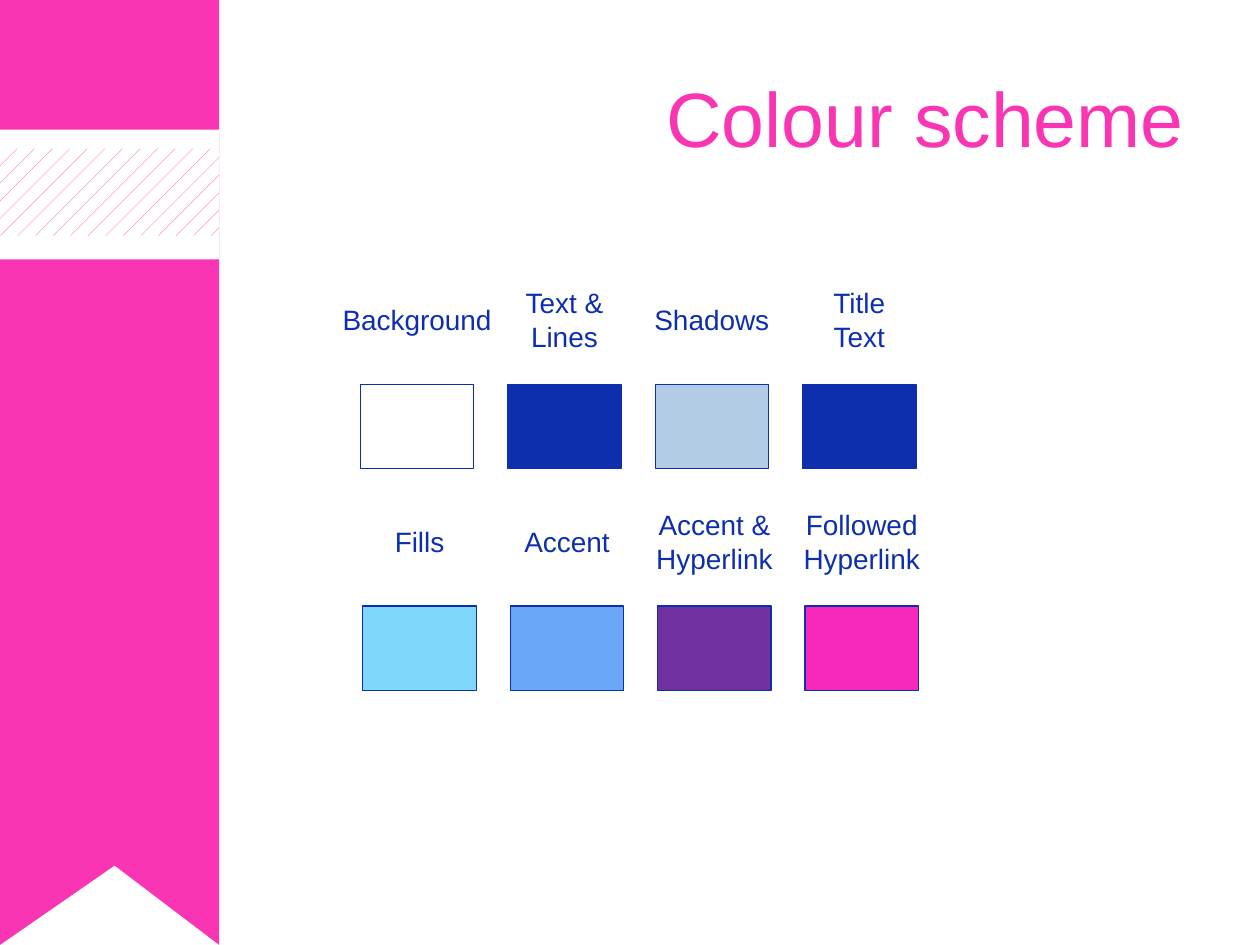
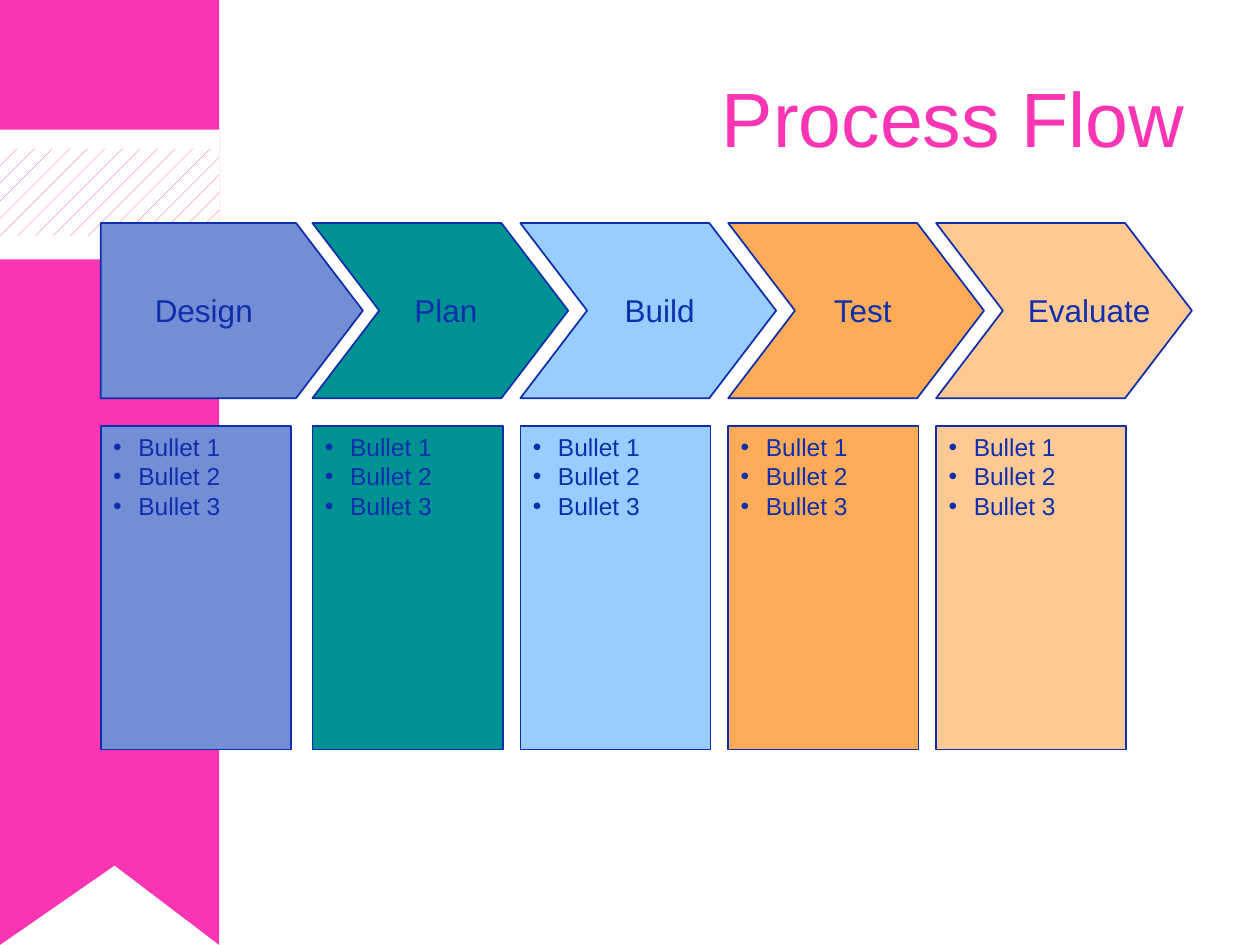
from lxml.etree import SubElement
from pptx import Presentation
from pptx.dml.color import RGBColor
from pptx.enum.dml import MSO_PATTERN as Pattern
from pptx.enum.shapes import MSO_SHAPE as Preset
from pptx.enum.text import MSO_ANCHOR as Anchor, MSO_AUTO_SIZE as AutoSize, PP_ALIGN as Align
from pptx.oxml.ns import qn
from pptx.util import Inches, Pt

FONT = "Arial"
COLOURS = {
    "white": "FFFFFF",
    "pink": "F935B3",
    "navy": "0E2FAD",
    "shadow": "B3CCE6",
    "sky": "7FD7FC",
    "blue": "6BA7F8",
    "purple": "7030A0",
    "magenta": "F729BC",
    "periwinkle": "748ED6",
    "teal": "009193",
    "pale_blue": "99CCFF",
    "orange": "FFAB57",
    "peach": "FFC993",
}
RIBBON_WIDTH = 1.74
SWATCH_WIDTH, SWATCH_HEIGHT, SWATCH_PITCH = 0.9, 0.67, 1.17
LABEL_HEIGHTS = {1: 0.37, 2: 0.64}

SWATCH_ROWS = [
    (2.86, 3.05, 2.54, [
        ("Background", 1.42, "white"),
        ("Text &\nLines", 0.87, "navy"),
        ("Shadows", 1.14, "shadow"),
        ("Title\vText", 0.66, "navy"),
    ]),
    (2.88, 4.81, 4.3, [
        ("Fills", 0.62, "sky"),
        ("Accent", 0.91, "blue"),
        ("Accent &\nHyperlink", 1.16, "purple"),
        ("Followed\nHyperlink", 1.16, "magenta"),
    ]),
]

STEPS = [
    ("Design", 1.13, 0.98, "periwinkle"),
    ("Plan", 3.19, 0.7, "teal"),
    ("Build", 4.86, 0.76, "pale_blue"),
    ("Test", 6.52, 0.69, "orange"),
    ("Evaluate", 8.06, 1.17, "peach"),
]
BULLETS = ["Bullet 1", "Bullet 2", "Bullet 3"]
FIRST_STEP_LEFT, SECOND_STEP_LEFT, STEP_PITCH = 0.8, 2.48, 1.65
ARROW_TOP, ARROW_HEIGHT, ARROW_POINT = 1.77, 1.39, 0.53


def colour(name):
    return RGBColor.from_string(COLOURS[name])


def style_text(frame, size, colour_name, align):
    for para in frame.paragraphs:
        para.alignment = align
        para.font.name = FONT
        para.font.size = Pt(size)
        para.font.color.rgb = colour(colour_name)


def style_shape(shape, fill, line_width=None):
    shape.shadow.inherit = False
    shape.fill.solid()
    shape.fill.fore_color.rgb = colour(fill)
    if line_width is None:
        shape.line.fill.background()
    else:
        shape.line.color.rgb = colour("navy")
        shape.line.width = Pt(line_width)


def add_preset(slide, preset, left, top, width, height, fill, line_width=None):
    shape = slide.shapes.add_shape(
        preset, Inches(left), Inches(top), Inches(width), Inches(height))
    style_shape(shape, fill, line_width)
    return shape


def add_label(slide, text, left, top, width, height, size, align):
    box = slide.shapes.add_textbox(
        Inches(left), Inches(top), Inches(width), Inches(height))
    frame = box.text_frame
    frame.word_wrap = False
    frame.auto_size = AutoSize.SHAPE_TO_FIT_TEXT
    frame.text = text
    style_text(frame, size, "navy", align)


def add_titled_slide(deck, layout, text):
    slide = deck.slides.add_slide(layout)
    title = slide.shapes.title
    title.left, title.top = Inches(0.5), Inches(0.3)
    title.width, title.height = Inches(9), Inches(1.25)
    frame = title.text_frame
    frame.text = text
    frame.vertical_anchor = Anchor.MIDDLE
    frame.auto_size = AutoSize.NONE
    style_text(frame, 44, "pink", Align.RIGHT)
    return slide


def add_ribbon(layout, slide):
    outline = [(RIBBON_WIDTH, 0), (RIBBON_WIDTH, 7.5), (0.91, 6.87), (0, 7.5)]
    builder = slide.shapes.build_freeform(0, 0)
    builder.add_line_segments([(Inches(x), Inches(y)) for x, y in outline])
    ribbon = builder.convert_to_shape()
    style_shape(ribbon, "pink")

    band = add_preset(slide, Preset.RECTANGLE, 0, 1.03, RIBBON_WIDTH, 1.03, "white")
    hatch = add_preset(slide, Preset.RECTANGLE, 0, 1.18, RIBBON_WIDTH, 0.69, "white")
    hatch.fill.patterned()
    hatch.fill.pattern = Pattern.PERCENT_5
    hatch.fill.fore_color.rgb = colour("pink")
    hatch.fill.back_color.rgb = colour("white")

    for position, shape in enumerate([ribbon, band, hatch], start=2):
        layout.shapes.element.insert(position, shape.element)


def add_swatch(slide, left, top, label_middle, text, label_width, fill):
    add_preset(slide, Preset.RECTANGLE, left, top,
               SWATCH_WIDTH, SWATCH_HEIGHT, fill, 0.75)
    height = LABEL_HEIGHTS[len(text.splitlines())]
    add_label(slide, text, left + (SWATCH_WIDTH - label_width) / 2,
              label_middle - height / 2, label_width, height, 16, Align.CENTER)


def add_bullet(para):
    properties = para._p.get_or_add_pPr()
    properties.set("marL", str(Inches(0.2)))
    properties.set("indent", str(Inches(-0.2)))
    SubElement(properties, qn("a:buFont")).set("typeface", FONT)
    SubElement(properties, qn("a:buChar")).set("char", "•")


def add_bullet_panel(slide, left, fill):
    panel = add_preset(slide, Preset.RECTANGLE, left, 3.38, 1.51, 2.57, fill, 1)
    frame = panel.text_frame
    frame.vertical_anchor = Anchor.TOP
    frame.text = "\n".join(BULLETS)
    for para in frame.paragraphs:
        add_bullet(para)
    style_text(frame, 14, "navy", Align.LEFT)


def add_step_arrow(slide, preset, left, width, fill):
    arrow = add_preset(slide, preset, left, ARROW_TOP, width, ARROW_HEIGHT, fill, 1)
    arrow.adjustments[0] = ARROW_POINT / ARROW_HEIGHT


def fill_colour_scheme(slide):
    for row_left, top, label_middle, swatches in SWATCH_ROWS:
        for column, (text, label_width, fill) in enumerate(swatches):
            left = row_left + column * SWATCH_PITCH
            add_swatch(slide, left, top, label_middle, text, label_width, fill)


def fill_process_flow(slide):
    for index, (name, label_left, label_width, fill) in enumerate(STEPS):
        if index == 0:
            left, preset, width = FIRST_STEP_LEFT, Preset.PENTAGON, 2.08
        else:
            left = SECOND_STEP_LEFT + (index - 1) * STEP_PITCH
            preset, width = Preset.CHEVRON, 2.03
        add_bullet_panel(slide, left, fill)
        add_step_arrow(slide, preset, left, width, fill)
        add_label(slide, name, label_left, 2.26, label_width, 0.4, 18, Align.LEFT)


def main():
    deck = Presentation()
    deck.slide_width, deck.slide_height = Inches(10), Inches(7.5)
    layout = deck.slide_layouts.get_by_name("Title Only")
    scheme = add_titled_slide(deck, layout, "Colour scheme")
    add_ribbon(layout, scheme)
    fill_colour_scheme(scheme)
    fill_process_flow(add_titled_slide(deck, layout, "Process Flow"))
    deck.save("out.pptx")


if __name__ == "__main__":
    main()
